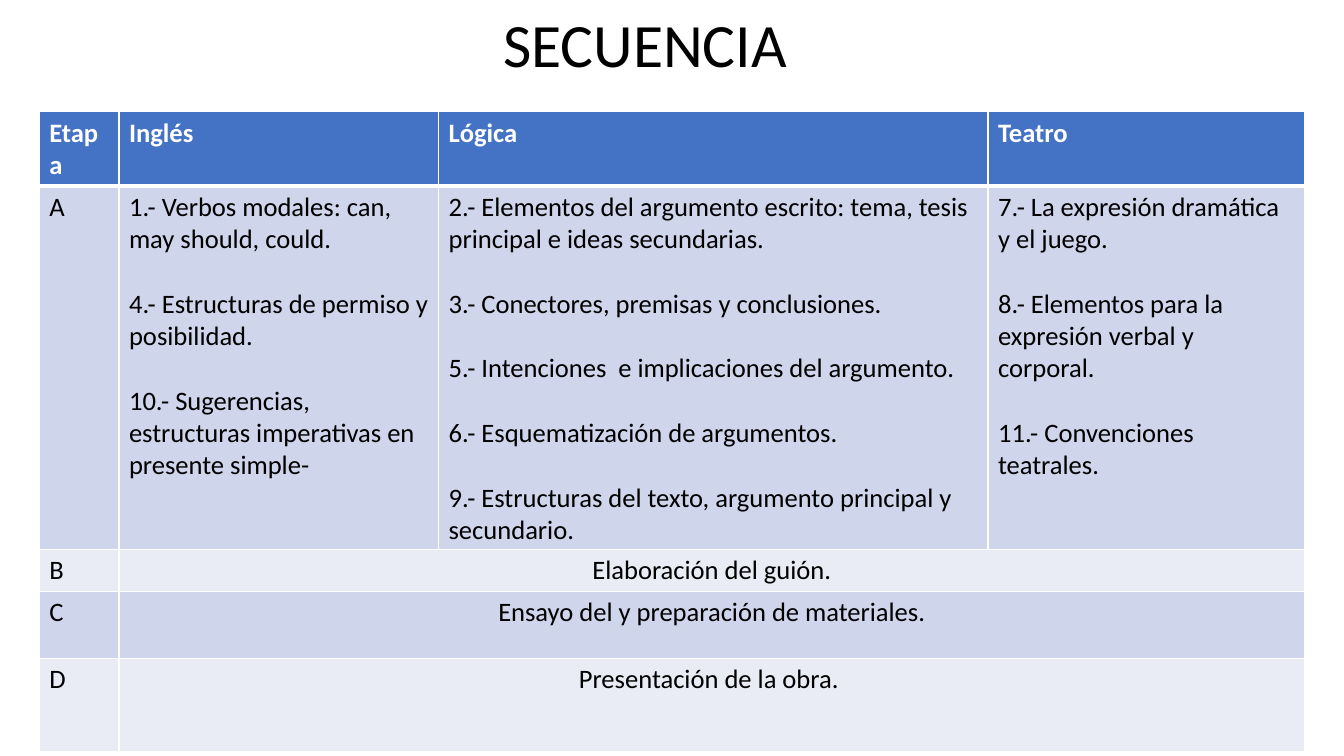
from lxml import etree
from pptx import Presentation
from pptx.dml.color import RGBColor
from pptx.enum.text import MSO_ANCHOR, PP_ALIGN
from pptx.oxml.ns import qn
from pptx.util import Inches, Pt

CENTER, LEFT = PP_ALIGN.CENTER, PP_ALIGN.LEFT
MIDDLE = MSO_ANCHOR.MIDDLE
WHITE, BLACK, BLUE = "FFFFFF", "000000", "4472C4"
BANDS = ["CFD5EA", "E9EBF5"]


def write(para, text, size, color, bold=False, align=LEFT):
    para.alignment = align
    run = para.add_run()
    run.text = text
    run.font.name = "Calibri"
    run.font.size = Pt(size)
    run.font.bold = bold
    run.font.color.rgb = RGBColor.from_string(color)


def style(cell, fill, base):
    cell.fill.solid()
    cell.fill.fore_color.rgb = RGBColor.from_string(fill)
    props = cell._tc.get_or_add_tcPr()
    for spot, side in enumerate(["lnL", "lnR", "lnT", "lnB"]):
        width = base if side == "lnB" else 1
        line = etree.Element(qn("a:" + side), w=str(Pt(width)))
        solid = etree.SubElement(line, qn("a:solidFill"))
        etree.SubElement(solid, qn("a:srgbClr"), val=WHITE)
        props.insert(spot, line)


deck = Presentation()
deck.slide_width = Inches(13.33)
deck.slide_height = Inches(7.5)
slide = deck.slides.add_slide(deck.slide_layouts[6])

title = slide.shapes.add_textbox(Inches(0.65), Inches(-0.25), Inches(11.5), Inches(1.45))
frame = title.text_frame
frame.word_wrap = True
frame.vertical_anchor = MIDDLE
frame.paragraphs[0].line_spacing = 0.9
write(frame.paragraphs[0], "SECUENCIA", 44, BLACK, align=CENTER)

rows = [
    [["Etapa"], ["Inglés"], ["Lógica"], ["Teatro"]],
    [
        ["A"],
        [
            "1.- Verbos modales: can, may should, could.",
            "4.- Estructuras de permiso y posibilidad.",
            "10.- Sugerencias, estructuras imperativas en presente simple-",
        ],
        [
            "2.- Elementos del argumento escrito: tema, tesis principal e ideas secundarias.",
            "3.- Conectores, premisas y conclusiones.",
            "5.- Intenciones  e implicaciones del argumento.",
            "6.- Esquematización de argumentos.",
            "9.- Estructuras del texto, argumento principal y secundario.",
        ],
        [
            "7.- La expresión dramática y el juego.",
            "8.- Elementos para la expresión verbal y corporal.",
            "11.- Convenciones teatrales.",
        ],
    ],
    [["B"], ["Elaboración del guión."]],
    [["C"], ["Ensayo del y preparación de materiales."]],
    [["D"], ["Presentación de la obra. "]],
]
widths = [0.79, 3.17, 5.45, 3.14]
heights = [0.38, 3.24, 0.38, 0.67, 0.92]

table = slide.shapes.add_table(
    len(rows), len(widths), Inches(0.39), Inches(1.11), Inches(12.55), Inches(6.32)
).table
for col, width in zip(table.columns, widths):
    col.width = Inches(width)
for row, height in zip(table.rows, heights):
    row.height = Inches(height)

for r, row in enumerate(rows):
    head = r == 0
    merged = len(row) < len(widths)
    for c in range(len(widths)):
        style(table.cell(r, c), BLUE if head else BANDS[(r - 1) % 2], 3 if head else 1)
    if merged:
        table.cell(r, 1).merge(table.cell(r, 3))
    for c, items in enumerate(row):
        frame = table.cell(r, c).text_frame
        for n, text in enumerate(items):
            para = frame.add_paragraph() if n else frame.paragraphs[0]
            if n:
                para.space_before = Pt(23.2)
            align = CENTER if merged and c else LEFT
            write(para, text, 19, WHITE if head else BLACK, head, align)

deck.save("out.pptx")
